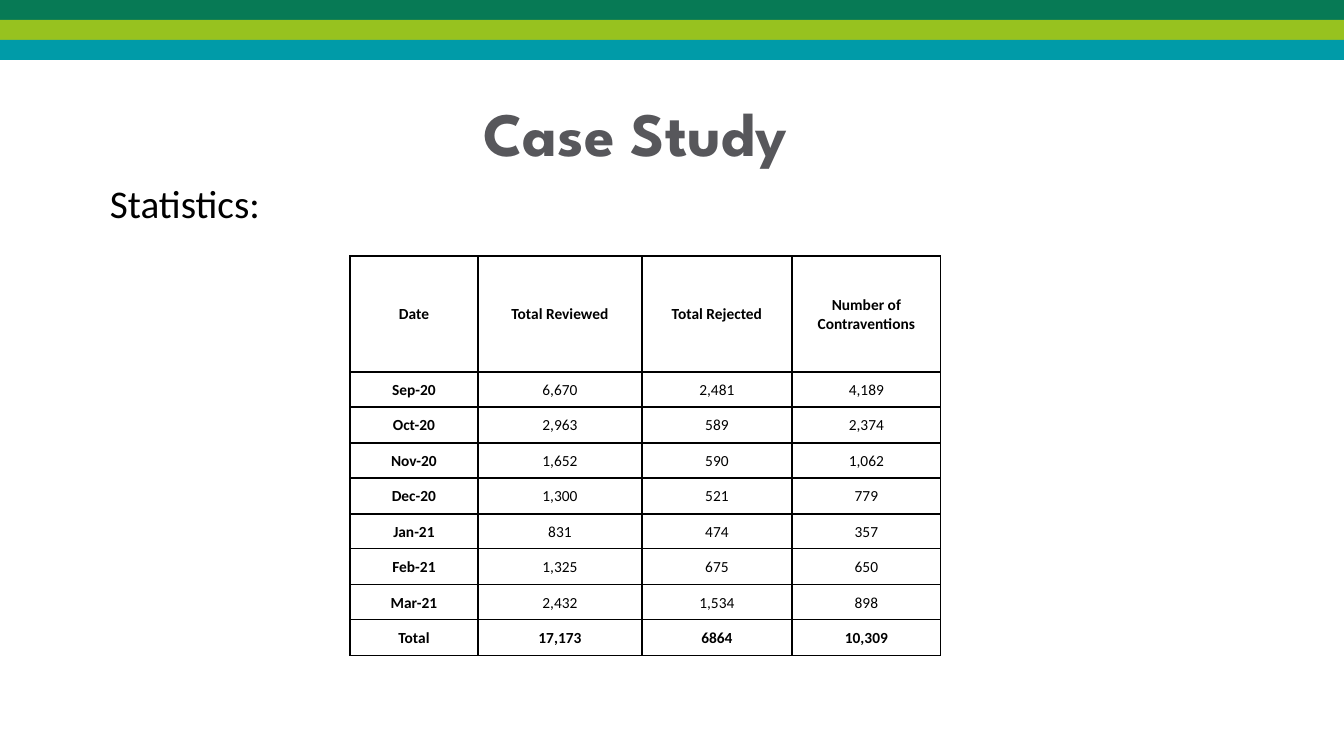
from lxml.etree import SubElement
from pptx import Presentation
from pptx.dml.color import RGBColor
from pptx.enum.shapes import MSO_SHAPE
from pptx.enum.text import MSO_ANCHOR, MSO_AUTO_SIZE, PP_ALIGN
from pptx.oxml.ns import qn
from pptx.util import Emu, Pt

SLIDE_W, SLIDE_H = 1344, 756
BLACK = "000000"


def px(n):
    return Emu(round(n * 914400 / 100.8))


def rgb(value):
    return RGBColor.from_string(value)


class SlideBuilder:
    body_font = "Calibri"
    title_font = "League Spartan"
    border_pt = 1

    def __init__(self, prs):
        self.s = prs.slides.add_slide(prs.slide_layouts[6])

    def style(self, p, size, font=None, color=BLACK, bold=False, align=PP_ALIGN.LEFT):
        p.alignment = align
        for r in p.runs:
            r.font.name = font or self.body_font
            r.font.size = Pt(size)
            r.font.bold = bold
            r.font.color.rgb = rgb(color)

    def band(self, x, y, w, h, color):
        sp = self.s.shapes.add_shape(MSO_SHAPE.RECTANGLE, px(x), px(y), px(w), px(h))
        sp.shadow.inherit = False
        sp.fill.solid()
        sp.fill.fore_color.rgb = rgb(color)
        sp.line.fill.background()

    def text(self, x, y, w, h, text, size, **style):
        tf = self.s.shapes.add_textbox(px(x), px(y), px(w), px(h)).text_frame
        tf.word_wrap = True
        tf.auto_size = MSO_AUTO_SIZE.SHAPE_TO_FIT_TEXT
        tf.text = text
        self.style(tf.paragraphs[0], size, **style)

    def borders(self, cell):
        tc_pr = cell._tc.get_or_add_tcPr()
        for i, side in enumerate(("a:lnL", "a:lnR", "a:lnT", "a:lnB")):
            ln = SubElement(tc_pr, qn(side), w=str(Pt(self.border_pt)))
            SubElement(SubElement(ln, qn("a:solidFill")), qn("a:srgbClr"), val=BLACK)
            # Border lines come before the cell fill
            tc_pr.insert(i, ln)

    def table(self, x, y, widths, heights, rows, size):
        frame = self.s.shapes.add_table(len(rows), len(widths), px(x), px(y),
                                        px(sum(widths)), px(sum(heights)))
        table = frame.table
        table.first_row = table.horz_banding = False
        for col, w in zip(table.columns, widths):
            col.width = px(w)
        for row, h in zip(table.rows, heights):
            row.height = px(h)
        for i, values in enumerate(rows):
            for j, value in enumerate(values):
                cell = table.cell(i, j)
                cell.text = value
                cell.fill.background()
                cell.vertical_anchor = MSO_ANCHOR.MIDDLE
                cell.margin_left = cell.margin_right = cell.margin_top = px(1)
                cell.margin_bottom = 0
                bold = i in (0, len(rows) - 1) or j == 0
                self.style(cell.text_frame.paragraphs[0], size, bold=bold,
                           align=PP_ALIGN.CENTER)
                self.borders(cell)


def main():
    prs = Presentation()
    prs.slide_width, prs.slide_height = px(SLIDE_W), px(SLIDE_H)
    slide = SlideBuilder(prs)

    # Header bands
    band_h = 20
    for i, color in enumerate(("077A55", "97C21F", "009BA8")):
        slide.band(0, i * band_h, SLIDE_W, band_h, color)

    # Title and subtitle
    slide.text(236, 90, 799, 85, "Case Study", 44, font=slide.title_font,
               color="57575B", bold=True, align=PP_ALIGN.CENTER)
    slide.text(100, 174, 1144, 57, "Statistics:", 28)

    # Monthly statistics
    rows = [
        ("Date", "Total Reviewed", "Total Rejected", "Number of Contraventions"),
        ("Sep-20", "6,670", "2,481", "4,189"),
        ("Oct-20", "2,963", "589", "2,374"),
        ("Nov-20", "1,652", "590", "1,062"),
        ("Dec-20", "1,300", "521", "779"),
        ("Jan-21", "831", "474", "357"),
        ("Feb-21", "1,325", "675", "650"),
        ("Mar-21", "2,432", "1,534", "898"),
        ("Total", "17,173", "6864", "10,309"),
    ]
    slide.table(350, 256, [128, 164, 150, 149], [116] + [35, 36] * 4, rows, 11)

    prs.save("out.pptx")


if __name__ == "__main__":
    main()
